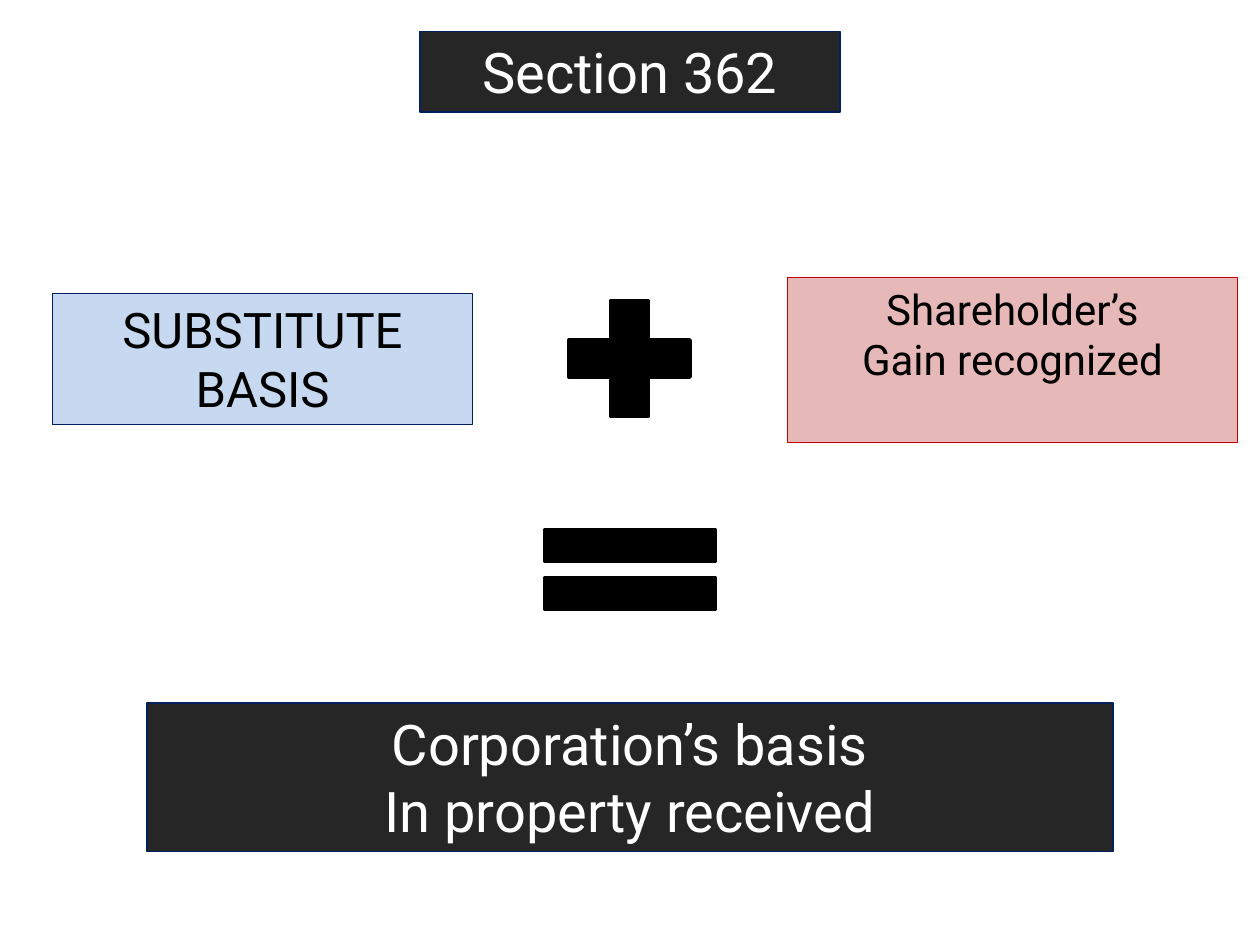
from dataclasses import dataclass

import pptx
import pptx.dml.color
import pptx.enum.shapes
import pptx.enum.text
import pptx.util

RGBColor = pptx.dml.color.RGBColor
ShapeKind = pptx.enum.shapes.MSO_SHAPE

BLACK = RGBColor(0x00, 0x00, 0x00)
WHITE = RGBColor(0xFF, 0xFF, 0xFF)
CHARCOAL = RGBColor(0x26, 0x26, 0x26)
NAVY = RGBColor(0x00, 0x20, 0x60)
PALE_BLUE = RGBColor(0xC6, 0xD9, 0xF1)
PINK = RGBColor(0xE6, 0xB9, 0xB8)
RED = RGBColor(0xC0, 0x00, 0x00)

FONT = "Roboto"
SLIDE_WIDTH = pptx.util.Inches(10)
SLIDE_HEIGHT = pptx.util.Inches(7.5)
COLUMN = SLIDE_WIDTH / 24
ROW = SLIDE_HEIGHT / 30


@dataclass(frozen=True)
class Area:
    """A rectangle measured in grid columns and rows."""

    column: float
    row: float
    columns: float
    rows: float


@dataclass(frozen=True)
class Term:
    """A labelled box of the equation."""

    area: Area
    lines: tuple[str, ...]
    size: int
    fill: RGBColor = CHARCOAL
    outline: RGBColor = NAVY
    text: RGBColor = WHITE


@dataclass(frozen=True)
class Operator:
    area: Area
    kind: ShapeKind


TERMS = (
    Term(Area(1, 9.32, 8, 4.16), ("SUBSTITUTE BASIS",), 28, PALE_BLUE, NAVY, BLACK),
    Term(Area(15, 8.8, 8.57, 5.24), ("Shareholder’s", "Gain recognized"), 24, PINK, RED, BLACK),
    Term(Area(2.8, 22.32, 18.4, 4.72), ("Corporation’s basis", "In property received"), 32),
    Term(Area(8, 1, 8, 2.56), ("Section 362",), 32),
)
OPERATORS = (
    Operator(Area(10.42, 8.88, 3.14, 5), ShapeKind.MATH_PLUS),
    Operator(Area(9.8, 15.92, 4.4, 4.32), ShapeKind.MATH_EQUAL),
)


def add_filled_shape(
    slide: pptx.slide.Slide,
    kind: ShapeKind,
    area: Area,
    fill: RGBColor,
    outline: RGBColor,
    line_width: float,
) -> pptx.shapes.autoshape.Shape:
    shape = slide.shapes.add_shape(
        kind,
        round(area.column * COLUMN),
        round(area.row * ROW),
        round(area.columns * COLUMN),
        round(area.rows * ROW),
    )
    shape.shadow.inherit = False
    shape.fill.solid()
    shape.fill.fore_color.rgb = fill
    shape.line.color.rgb = outline
    shape.line.width = pptx.util.Pt(line_width)
    return shape


def add_term(slide: pptx.slide.Slide, term: Term) -> None:
    shape = add_filled_shape(
        slide, ShapeKind.RECTANGLE, term.area, term.fill, term.outline, 0.75
    )
    frame = shape.text_frame
    frame.word_wrap = True
    frame.auto_size = pptx.enum.text.MSO_AUTO_SIZE.SHAPE_TO_FIT_TEXT
    frame.vertical_anchor = pptx.enum.text.MSO_ANCHOR.TOP
    frame.text = "\n".join(term.lines)
    for paragraph in frame.paragraphs:
        paragraph.alignment = pptx.enum.text.PP_ALIGN.CENTER
        paragraph.font.name = FONT
        paragraph.font.size = pptx.util.Pt(term.size)
        paragraph.font.color.rgb = term.text


def main() -> None:
    presentation = pptx.Presentation()
    presentation.slide_width = SLIDE_WIDTH
    presentation.slide_height = SLIDE_HEIGHT
    slide = presentation.slides.add_slide(presentation.slide_layouts[6])
    for term in TERMS:
        add_term(slide, term)
    for operator in OPERATORS:
        add_filled_shape(slide, operator.kind, operator.area, BLACK, BLACK, 2)
    presentation.save("out.pptx")


if __name__ == "__main__":
    main()
